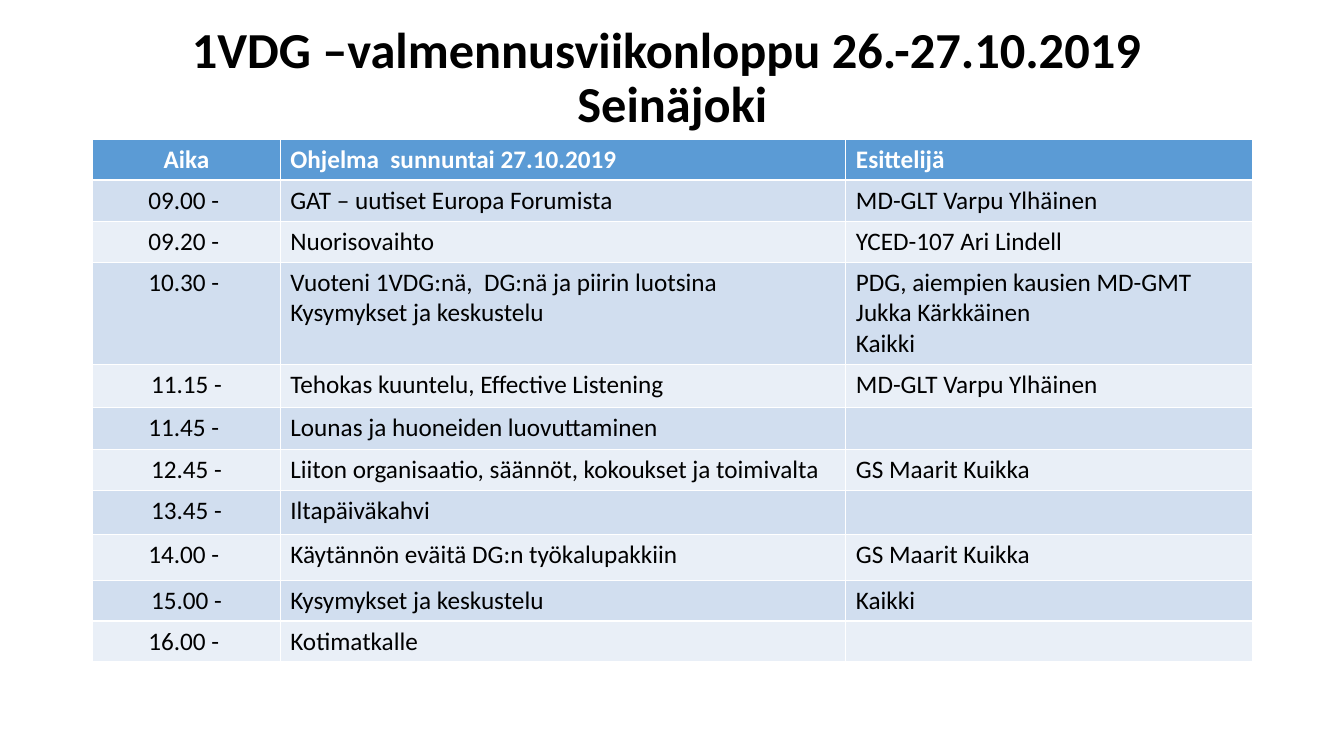
from pptx import Presentation
from pptx.dml.color import RGBColor
from pptx.enum.text import MSO_ANCHOR, MSO_AUTO_SIZE, PP_ALIGN
from pptx.util import Inches, Pt

COLORS = {
    "text": "000000",
    "header_text": "FFFFFF",
    "header": "5B9BD5",
    "odd_row": "D1DEEF",
    "even_row": "E9EFF7",
}
FONT = "Calibri"
TITLE = "1VDG –valmennusviikonloppu 26.-27.10.2019  Seinäjoki"
COLUMN_WIDTHS = [1.86, 5.61, 4.03]
ROW_HEIGHTS = [0.38, 0.41, 0.39, 0.94, 0.43, 0.41, 0.41, 0.44, 0.45, 0.38, 0.38]
PROGRAMME = [
    ("Aika", "Ohjelma  sunnuntai 27.10.2019", "Esittelijä"),
    ("09.00 - ", "GAT – uutiset Europa Forumista", "MD-GLT Varpu Ylhäinen"),
    ("09.20 - ", "Nuorisovaihto", "YCED-107 Ari Lindell"),
    ("10.30 - ", "Vuoteni 1VDG:nä,  DG:nä ja piirin luotsina\nKysymykset ja keskustelu",
     "PDG, aiempien kausien MD-GMT Jukka Kärkkäinen\nKaikki"),
    ("11.15 -", "Tehokas kuuntelu, Effective Listening", "MD-GLT Varpu Ylhäinen"),
    ("11.45 - ", "Lounas ja huoneiden luovuttaminen", ""),
    ("12.45 -", "Liiton organisaatio, säännöt, kokoukset ja toimivalta",
     "GS Maarit Kuikka"),
    ("13.45 -", "Iltapäiväkahvi", ""),
    ("14.00 - ", "Käytännön eväitä DG:n työkalupakkiin", "GS Maarit Kuikka"),
    ("15.00 -", "Kysymykset ja keskustelu", "Kaikki"),
    ("16.00 - ", "Kotimatkalle", ""),
]


def set_font(para, size, color, bold):
    para.font.name = FONT
    para.font.size = Pt(size)
    para.font.bold = bold
    para.font.color.rgb = RGBColor.from_string(COLORS[color])


def set_title(page):
    title = page.shapes.title
    title.left, title.top = Inches(0.92), Inches(0.39)
    title.width, title.height = Inches(11.5), Inches(0.79)
    frame = title.text_frame
    frame.text = TITLE
    frame.word_wrap = True
    frame.auto_size = MSO_AUTO_SIZE.NONE
    frame.vertical_anchor = MSO_ANCHOR.MIDDLE
    para = frame.paragraphs[0]
    para.alignment = PP_ALIGN.CENTER
    para.line_spacing = 0.9
    set_font(para, 36, "text", True)


def fill_cell(cell, text, fill, centered, header):
    cell.text = text
    cell.fill.solid()
    cell.fill.fore_color.rgb = RGBColor.from_string(COLORS[fill])
    for para in cell.text_frame.paragraphs:
        para.alignment = PP_ALIGN.CENTER if centered else PP_ALIGN.LEFT
        set_font(para, 18, "header_text" if header else "text", header)


def add_programme(page):
    """Add the timetable; the default table style supplies its white borders."""
    table = page.shapes.add_table(
        len(PROGRAMME), len(COLUMN_WIDTHS),
        Inches(0.92), Inches(1.38), Inches(11.5), Inches(5.01)).table
    for column, width in zip(table.columns, COLUMN_WIDTHS):
        column.width = Inches(width)
    for row, height in zip(table.rows, ROW_HEIGHTS):
        row.height = Inches(height)
    for r, entry in enumerate(PROGRAMME):
        header = r == 0
        fill = "header" if header else "odd_row" if r % 2 else "even_row"
        for c, text in enumerate(entry):
            fill_cell(table.cell(r, c), text, fill, c == 0, header)


def main():
    deck = Presentation()
    deck.slide_width, deck.slide_height = Inches(13.33), Inches(7.5)
    page = deck.slides.add_slide(deck.slide_layouts.get_by_name("Title Only"))
    set_title(page)
    add_programme(page)
    deck.save("out.pptx")


if __name__ == "__main__":
    main()
